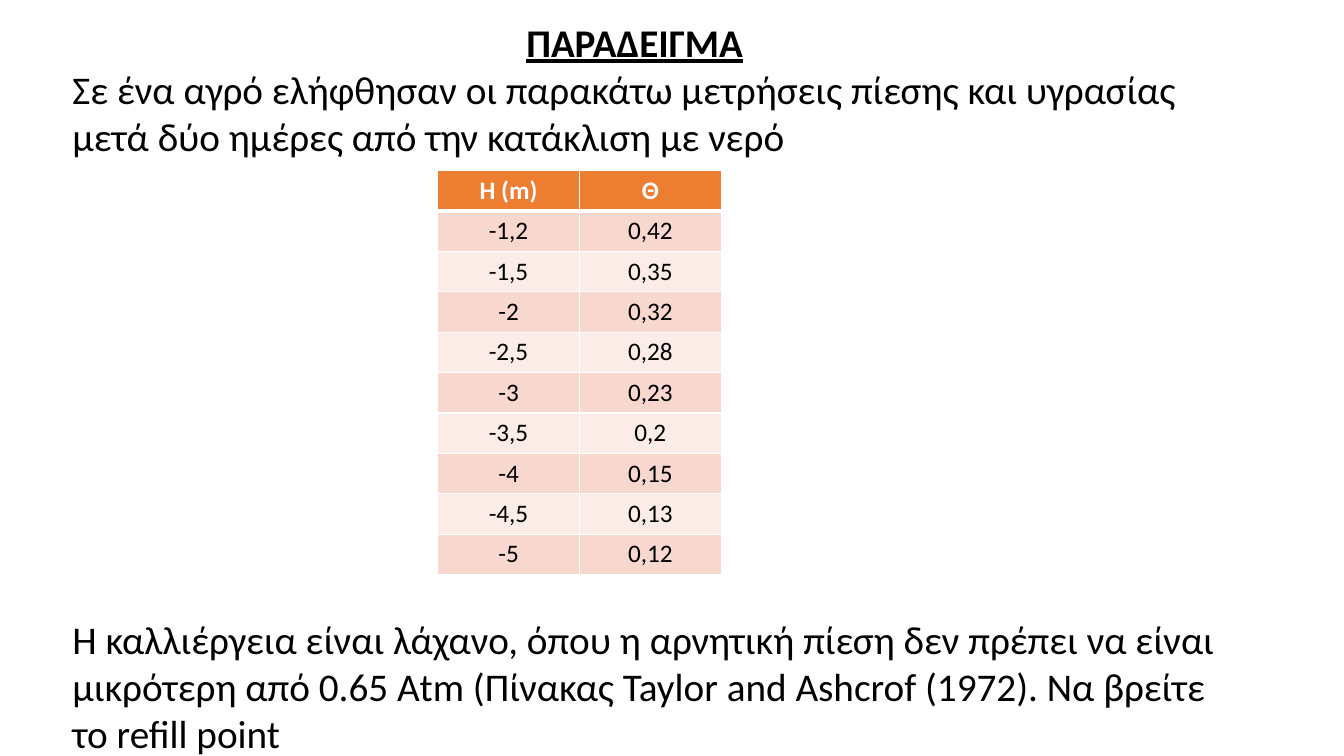
from lxml.etree import SubElement
from pptx import Presentation
from pptx.dml.color import RGBColor
from pptx.enum.text import MSO_ANCHOR, MSO_AUTO_SIZE, PP_ALIGN
from pptx.oxml.ns import qn
from pptx.util import Pt

TITLE = "ΠΑΡΑΔΕΙΓΜΑ"
INTRO = ("Σε ένα αγρό ελήφθησαν οι παρακάτω μετρήσεις πίεσης και υγρασίας "
         "μετά δύο ημέρες από την κατάκλιση με νερό")
QUESTION = ("Η καλλιέργεια είναι λάχανο, όπου η αρνητική πίεση δεν πρέπει να είναι "
            "μικρότερη από 0.65 Αtm (Πίνακας Taylor and Ashcrof (1972). "
            "Να βρείτε το refill point")
MEASUREMENTS = [
    ("Η (m)", "Θ"),
    ("-1,2", "0,42"),
    ("-1,5", "0,35"),
    ("-2", "0,32"),
    ("-2,5", "0,28"),
    ("-3", "0,23"),
    ("-3,5", "0,2"),
    ("-4", "0,15"),
    ("-4,5", "0,13"),
    ("-5", "0,12"),
]

THEME = {
    "font": "Calibri",
    "body_size": 28,
    "table_size": 18,
    "ink": "000000",
    "white": "FFFFFF",
    "header": "ED7D31",
    "bands": ("FCECE8", "F8D7CE"),
}

SLIDE_WIDTH, SLIDE_HEIGHT = 960, 540
TABLE_LEFT, TABLE_TOP = 312.6, 121.9
COLUMN_WIDTH, ROW_HEIGHT = 101.3, 28.87
CELL_PADDING = 3.4


def write(frame, text, size=THEME["body_size"], color=THEME["ink"],
          align=PP_ALIGN.LEFT, bold=False, underline=False):
    paragraph = frame.paragraphs[0]
    paragraph.alignment = align
    run = paragraph.add_run()
    run.text = text
    font = run.font
    font.name = THEME["font"]
    font.size = Pt(size)
    font.bold = bold
    font.underline = underline
    font.color.rgb = RGBColor.from_string(color)


def add_text(slide, text, left, top, width, height, **style):
    frame = slide.shapes.add_textbox(
        Pt(left), Pt(top), Pt(width), Pt(height)).text_frame
    frame.word_wrap = True
    frame.auto_size = MSO_AUTO_SIZE.SHAPE_TO_FIT_TEXT
    write(frame, text, **style)


def set_borders(cell, widths):
    """Draw white borders; they must precede the fill in the cell properties."""
    properties = cell._tc.get_or_add_tcPr()
    for side, width in widths.items():
        line = SubElement(properties, qn(f"a:ln{side}"), w=str(Pt(width)))
        solid = SubElement(line, qn("a:solidFill"))
        SubElement(solid, qn("a:srgbClr"), val=THEME["white"])


def add_measurements(slide):
    row_count, column_count = len(MEASUREMENTS), len(MEASUREMENTS[0])
    table = slide.shapes.add_table(
        row_count, column_count, Pt(TABLE_LEFT), Pt(TABLE_TOP),
        Pt(COLUMN_WIDTH * column_count), Pt(ROW_HEIGHT * row_count)).table
    for column in table.columns:
        column.width = Pt(COLUMN_WIDTH)
    for row_index, values in enumerate(MEASUREMENTS):
        table.rows[row_index].height = Pt(ROW_HEIGHT)
        is_header = row_index == 0
        fill = THEME["header"] if is_header else THEME["bands"][row_index % 2]
        borders = {"L": 1, "R": 1,
                   "T": 3 if row_index == 1 else 1,
                   "B": 3 if is_header else 1}
        for column_index, value in enumerate(values):
            cell = table.cell(row_index, column_index)
            set_borders(cell, borders)
            cell.fill.solid()
            cell.fill.fore_color.rgb = RGBColor.from_string(fill)
            cell.margin_top = cell.margin_bottom = Pt(CELL_PADDING)
            cell.vertical_anchor = MSO_ANCHOR.TOP
            write(cell.text_frame, value, size=THEME["table_size"],
                  color=THEME["white"] if is_header else THEME["ink"],
                  align=PP_ALIGN.CENTER, bold=is_header)


def main():
    deck = Presentation()
    deck.slide_width, deck.slide_height = Pt(SLIDE_WIDTH), Pt(SLIDE_HEIGHT)
    slide = deck.slides.add_slide(deck.slide_layouts[6])
    add_text(slide, INTRO, 44.6, 43.2, 848.2, 108.7)
    add_measurements(slide)
    add_text(slide, QUESTION, 44.6, 435.6, 838.8, 108.7)
    add_text(slide, TITLE, 251.3, 9.4, 403.9, 41,
             align=PP_ALIGN.CENTER, bold=True, underline=True)
    deck.save("out.pptx")


if __name__ == "__main__":
    main()
